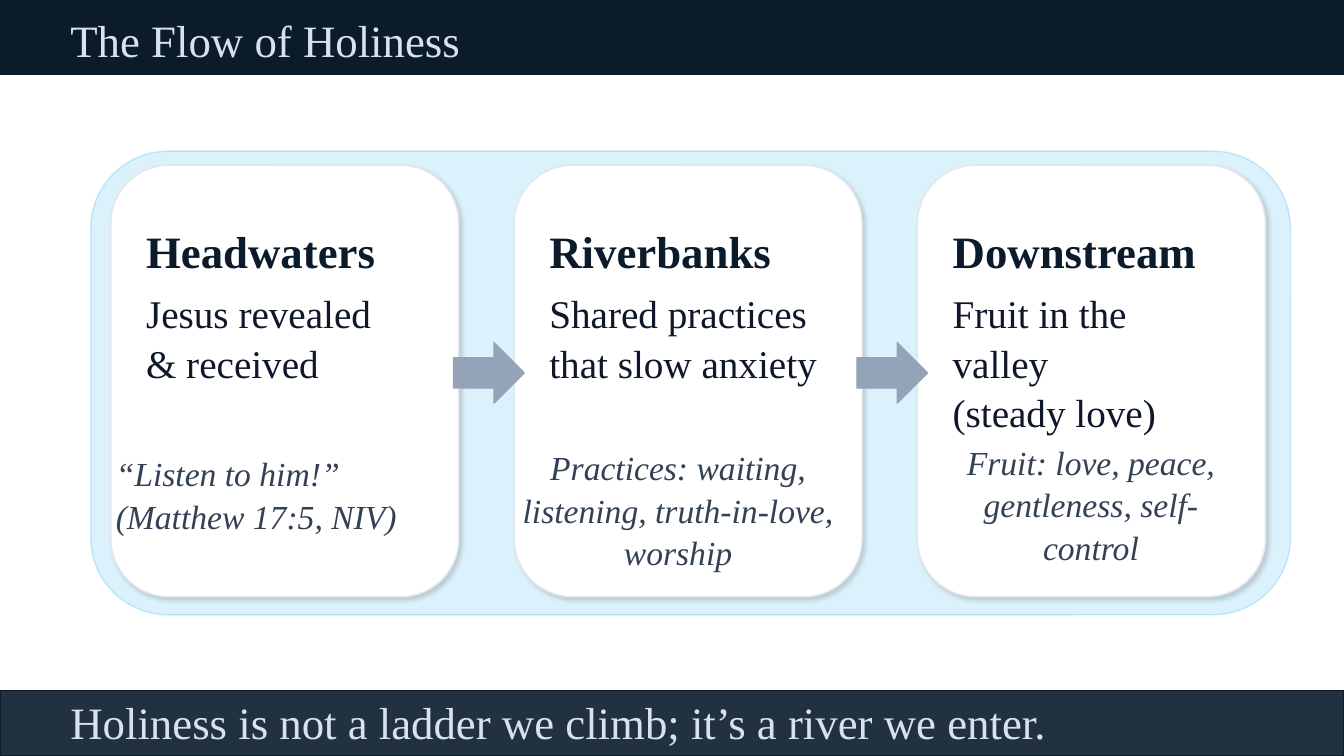
from pptx import Presentation
from pptx.dml.color import RGBColor
from pptx.enum.shapes import MSO_SHAPE as Kind
from pptx.enum.text import MSO_ANCHOR as Anchor, PP_ALIGN as Align
from pptx.oxml import parse_xml
from pptx.oxml.ns import nsdecls, qn
from pptx.util import Pt

SCALE = 9144
NAVY, PALE, WHITE = "0B1B2B", "D7E2F0", "FFFFFF"
SKY, GREY, EDGE = "0EA5E9", "94A3B8", "E5E7EB"
INK, SLATE = "0F172A", "334155"


def px(n):
    return n * SCALE


def hue(code):
    return RGBColor.from_string(code)


class Deck:
    font = "Times New Roman"
    lead = 1.05

    def __init__(self, wide, high):
        self.prs = Presentation()
        self.prs.slide_width = px(wide)
        self.prs.slide_height = px(high)
        self.slide = self.prs.slides.add_slide(self.prs.slide_layouts[6])

    def shape(self, kind, box, fill, line, clear=(100, 100)):
        item = self.slide.shapes.add_shape(kind, *map(px, box))
        item.shadow.inherit = False
        item.fill.solid()
        item.fill.fore_color.rgb = hue(fill)
        item.line.color.rgb = hue(line)
        item.line.width = Pt(1)
        tints = item.element.spPr.iter(qn("a:srgbClr"))
        for tint, part in zip(list(tints), clear):
            if part < 100:
                tint.append(parse_xml(
                    f'<a:alpha {nsdecls("a")} val="{part * 1000}"/>'))
        return item

    def card(self, box):
        item = self.shape(Kind.ROUNDED_RECTANGLE, box, WHITE, EDGE)
        glow = item.element.spPr.find(qn("a:effectLst"))
        glow.append(parse_xml(
            f'<a:outerShdw {nsdecls("a")} blurRad="{Pt(3)}" dist="{Pt(2)}" '
            f'dir="{45 * 60000}" algn="bl" rotWithShape="0">'
            '<a:srgbClr val="000000"><a:alpha val="15000"/></a:srgbClr>'
            '</a:outerShdw>'))

    def text(self, box, words, size, tint, bold=False, slant=False,
             align=Align.LEFT, anchor=Anchor.MIDDLE):
        frame = self.slide.shapes.add_textbox(*map(px, box)).text_frame
        frame.word_wrap = True
        frame.vertical_anchor = anchor
        frame.text = words
        for para in frame.paragraphs:
            para.alignment = align
            para.line_spacing = self.lead
            for run in para.runs:
                font = run.font
                font.name = self.font
                font.size = Pt(size)
                font.bold = bold
                font.italic = slant
                font.color.rgb = hue(tint)

    def save(self):
        self.prs.save("out.pptx")


def main():
    deck = Deck(1333, 750)
    deck.shape(Kind.RECTANGLE, (0, 0, 1333, 75), NAVY, NAVY)
    deck.text((60, 27, 1220, 22), "The Flow of Holiness", 32, PALE)
    deck.shape(Kind.RECTANGLE, (0, 75, 1333, 675), WHITE, WHITE)
    deck.shape(Kind.ROUNDED_RECTANGLE, (90, 150, 1190, 460), SKY, SKY, (15, 20))

    stages = [
        ("Headwaters", "Jesus revealed\n& received", 295),
        ("Riverbanks", "Shared practices\nthat slow anxiety", 322),
        ("Downstream", "Fruit in the valley\n(steady love)", 295),
    ]
    for i, (head, body, wide) in enumerate(stages):
        left = 110 + 400 * i
        deck.card((left, 164, 345, 428))
        deck.text((left + 25, 230, 295, 35), head, 32, NAVY, bold=True)
        deck.text((left + 25, 280, wide, 160), body, 28, INK, anchor=Anchor.TOP)

    for left in (450, 850):
        deck.shape(Kind.RIGHT_ARROW, (left, 340, 70, 60), GREY, GREY)

    notes = [
        ((105, 472, 360, 35), "“Listen to him!” (Matthew 17:5, NIV)", Align.LEFT),
        ((500, 487, 345, 35),
         "Practices: waiting, listening, truth-in-love, worship", Align.CENTER),
        ((928, 482, 308, 35),
         "Fruit: love, peace, gentleness, self-control", Align.CENTER),
    ]
    for box, words, align in notes:
        deck.text(box, words, 24, SLATE, slant=True, align=align)

    deck.shape(Kind.RECTANGLE, (0, 685, 1333, 65), NAVY, NAVY, (90, 100))
    deck.text((60, 702, 1220, 25),
              "Holiness is not a ladder we climb; it’s a river we enter.", 32, PALE)
    deck.save()


if __name__ == "__main__":
    main()
